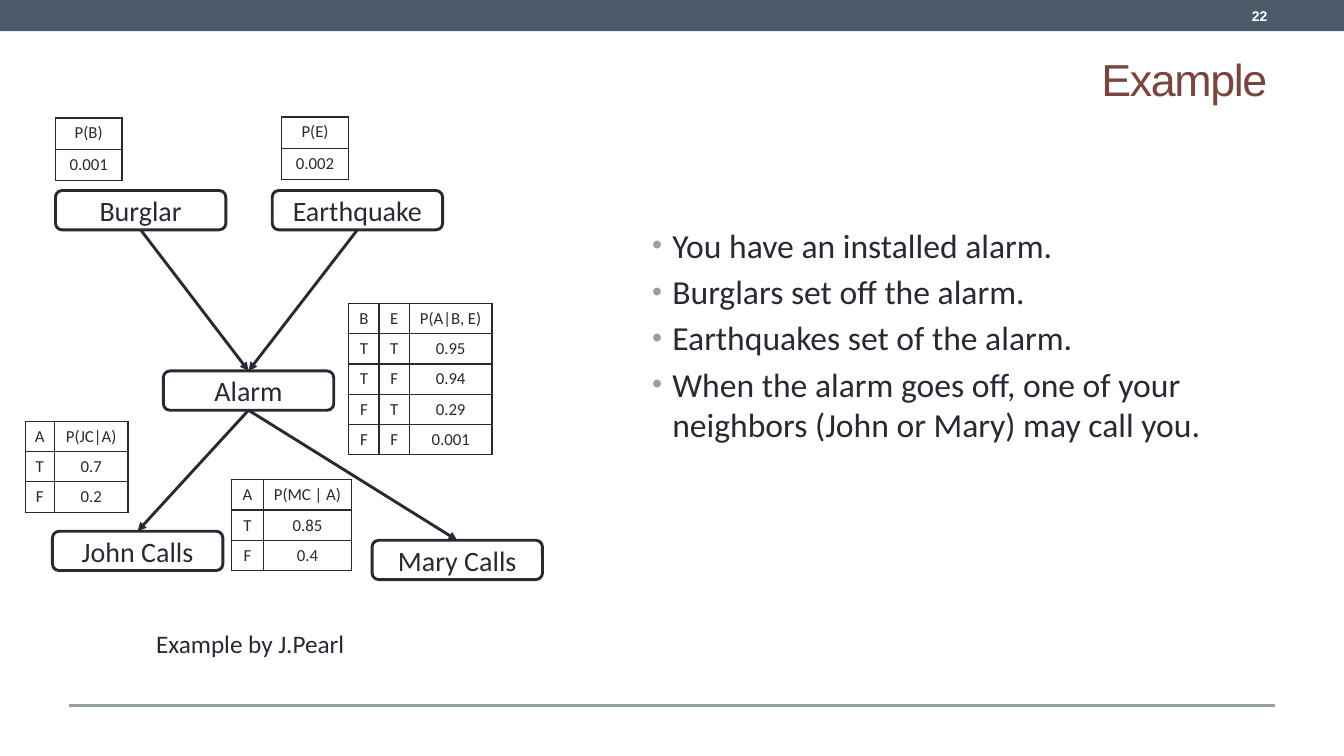
import lxml.etree
import pptx
import pptx.dml.color
import pptx.enum.shapes
import pptx.enum.text
import pptx.oxml
import pptx.oxml.ns
import pptx.util

PX = 9144  # 100 px to the inch
INK, WHITE, SAGE, SLATE, BRICK = "292934", "FFFFFF", "93A299", "4C5A6A", "79463D"
LINE_PT = 2.08
ALIGN = pptx.enum.text.PP_ALIGN
ANCHOR = pptx.enum.text.MSO_ANCHOR
SHAPE = pptx.enum.shapes.MSO_SHAPE
TOP_SITE, BOTTOM_SITE = 0, 2


def px(*lengths):
    return [pptx.util.Emu(length * PX) for length in lengths]


def color(hex_value):
    return pptx.dml.color.RGBColor.from_string(hex_value)


def add_xml(parent, tag, **attributes):
    return lxml.etree.SubElement(parent, pptx.oxml.ns.qn(tag), attributes)


def add_run(paragraph, text, size, hex_value=INK, font="Calibri", bold=False):
    run = paragraph.add_run()
    run.text = text
    run.font.size = pptx.util.Pt(size)
    run.font.name = font
    run.font.bold = bold
    run.font.color.rgb = color(hex_value)
    return run


def add_text(slide, box, text, size, align=ALIGN.LEFT, anchor=ANCHOR.TOP, **style):
    frame = slide.shapes.add_textbox(*px(*box)).text_frame
    frame.word_wrap = True
    frame.vertical_anchor = anchor
    frame.paragraphs[0].alignment = align
    return add_run(frame.paragraphs[0], text, size, **style)


def add_bullets(slide, box, lines):
    frame = slide.shapes.add_textbox(*px(*box)).text_frame
    frame.word_wrap = True
    for index, line in enumerate(lines):
        paragraph = frame.add_paragraph() if index else frame.paragraphs[0]
        paragraph.space_after = pptx.util.Pt(4.3)
        properties = paragraph._p.get_or_add_pPr()
        indent = 20 * PX
        properties.set("marL", str(indent))
        properties.set("indent", str(-indent))
        bullet_color = add_xml(properties, "a:buClr")
        add_xml(bullet_color, "a:srgbClr", val=SAGE)
        add_xml(properties, "a:buSzPct", val="85000")
        add_xml(properties, "a:buFont", typeface="Arial")
        add_xml(properties, "a:buChar", char="•")
        add_run(paragraph, line, 24)


def add_node(slide, left, top, label):
    node = slide.shapes.add_shape(SHAPE.ROUNDED_RECTANGLE, *px(left, top, 169, 39))
    node.shadow.inherit = False
    node.fill.solid()
    node.fill.fore_color.rgb = color(WHITE)
    node.line.color.rgb = color(INK)
    node.line.width = pptx.util.Pt(LINE_PT)
    frame = node.text_frame
    frame.margin_top = frame.margin_bottom = 0
    frame.vertical_anchor = ANCHOR.MIDDLE
    frame.paragraphs[0].alignment = ALIGN.CENTER
    add_run(frame.paragraphs[0], label, 20)
    return node


def add_line(slide, ends, hex_value):
    line = slide.shapes.add_connector(
        pptx.enum.shapes.MSO_CONNECTOR.STRAIGHT, *px(*ends))
    line.line.color.rgb = color(hex_value)
    line.line.width = pptx.util.Pt(LINE_PT)
    add_xml(line._element.spPr, "a:effectLst")
    return line


def add_influence(slide, cause, effect):
    """Draw an arrow glued from the cause's bottom to the effect's top."""
    arrow = add_line(slide, (0, 0, 0, 0), INK)
    arrow.begin_connect(cause, BOTTOM_SITE)
    arrow.end_connect(effect, TOP_SITE)
    add_xml(arrow.line._get_or_add_ln(), "a:tailEnd", type="triangle")


def style_cell(cell, text):
    cell.margin_left = cell.margin_right = px(2)[0]
    cell.margin_top = cell.margin_bottom = px(5)[0]
    properties = cell._tc.get_or_add_tcPr()
    for side in "LRTB":
        border = add_xml(properties, f"a:ln{side}", w="12700")
        add_xml(add_xml(border, "a:solidFill"), "a:srgbClr", val=INK)
    cell.fill.background()
    paragraph = cell.text_frame.paragraphs[0]
    paragraph.alignment = ALIGN.CENTER
    add_run(paragraph, text, 12)


def add_probabilities(slide, left, top, widths, row_height, rows):
    size = sum(widths), row_height * len(rows)
    table = slide.shapes.add_table(
        len(rows), len(widths), *px(left, top, *size)).table
    table.first_row = table.horz_banding = False
    for column, width in zip(table.columns, px(*widths)):
        column.width = width
    for row, texts in zip(table.rows, rows):
        row.height = px(row_height)[0]
        for cell, text in zip(row.cells, texts):
            style_cell(cell, text)


def add_frame(slide):
    """Add the top band, page number, title and bottom rule."""
    band = slide.shapes.add_shape(SHAPE.RECTANGLE, *px(0, 0, 1333, 31))
    band.shadow.inherit = False
    band.fill.solid()
    band.fill.fore_color.rgb = color(SLATE)
    band.line.fill.background()
    add_line(slide, (68, 700, 1265, 700), SAGE)
    heading = {"align": ALIGN.RIGHT, "anchor": ANCHOR.MIDDLE, "font": "Arial"}
    title = add_text(slide, (67, 42, 1200, 71), "Example", 32,
                     hex_value=BRICK, **heading)
    title._r.get_or_add_rPr().set("spc", "-100")
    add_text(slide, (1111, 2, 156, 28), "22", 10,
             hex_value=WHITE, bold=True, **heading)


def main():
    deck = pptx.Presentation()
    deck.slide_width, deck.slide_height = px(1333, 750)
    slide = deck.slides.add_slide(deck.slide_layouts[6])
    add_frame(slide)
    add_bullets(slide, (637, 218, 659, 330), [
        "You have an installed alarm.",
        "Burglars set off the alarm.",
        "Earthquakes set of the alarm.",
        "When the alarm goes off, one of your neighbors (John or Mary) may call you.",
    ])

    burglar = add_node(slide, 55, 189, "Burglar")
    earthquake = add_node(slide, 270, 189, "Earthquake")
    alarm = add_node(slide, 162, 368, "Alarm")
    john = add_node(slide, 52, 527, "John Calls")
    mary = add_node(slide, 369, 536, "Mary Calls")
    for cause, effect in ((burglar, alarm), (earthquake, alarm),
                          (alarm, john), (alarm, mary)):
        add_influence(slide, cause, effect)

    add_probabilities(slide, 55, 117, [66], 31, [["P(B)"], ["0.001"]])
    add_probabilities(slide, 279, 116, [67], 31, [["P(E)"], ["0.002"]])
    add_probabilities(slide, 346, 301, [30, 30, 82], 30, [
        ["B", "E", "P(A|B, E)"],
        ["T", "T", "0.95"],
        ["T", "F", "0.94"],
        ["F", "T", "0.29"],
        ["F", "F", "0.001"],
    ])
    add_probabilities(slide, 25, 418, [29, 73], 30,
                      [["A", "P(JC|A)"], ["T", "0.7"], ["F", "0.2"]])
    add_probabilities(slide, 230, 476, [31, 88], 30,
                      [["A", "P(MC | A)"], ["T", "0.85"], ["F", "0.4"]])
    add_text(slide, (145, 618, 240, 40), "Example by J.Pearl", 18)
    deck.save("out.pptx")


if __name__ == "__main__":
    main()
